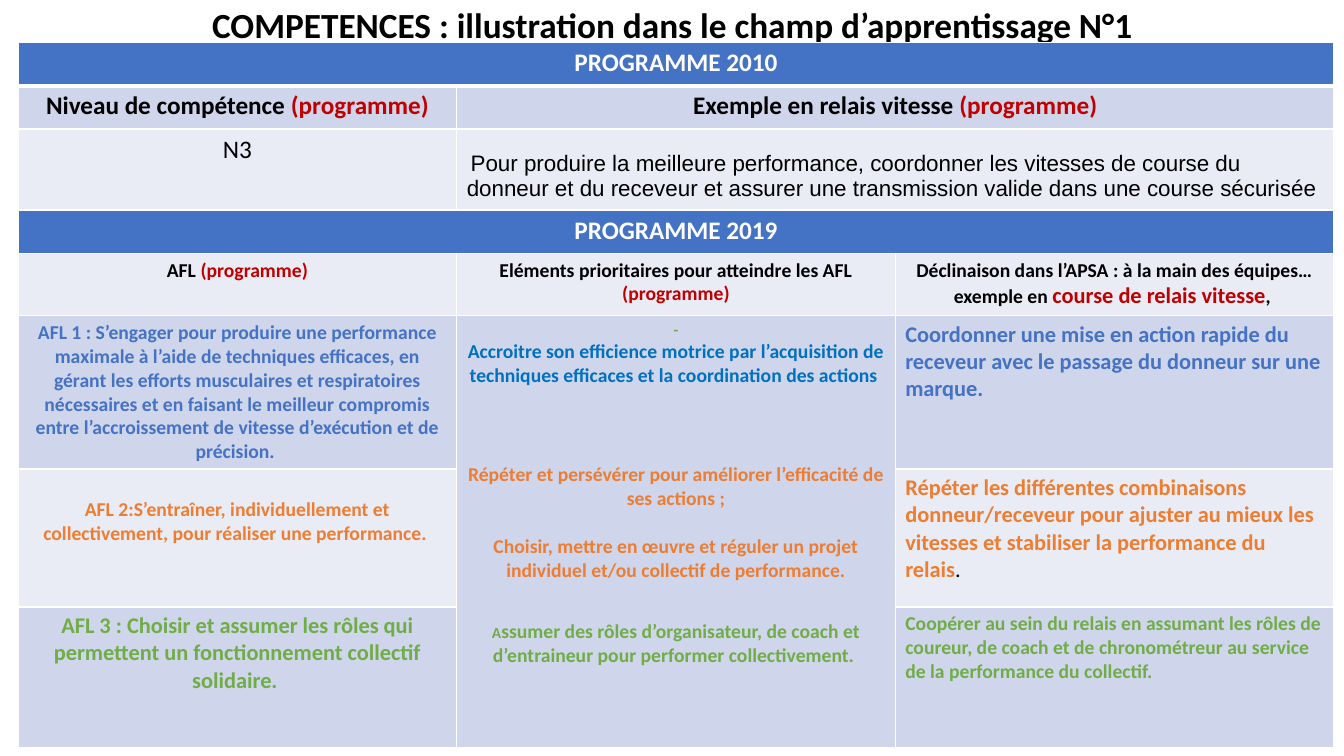
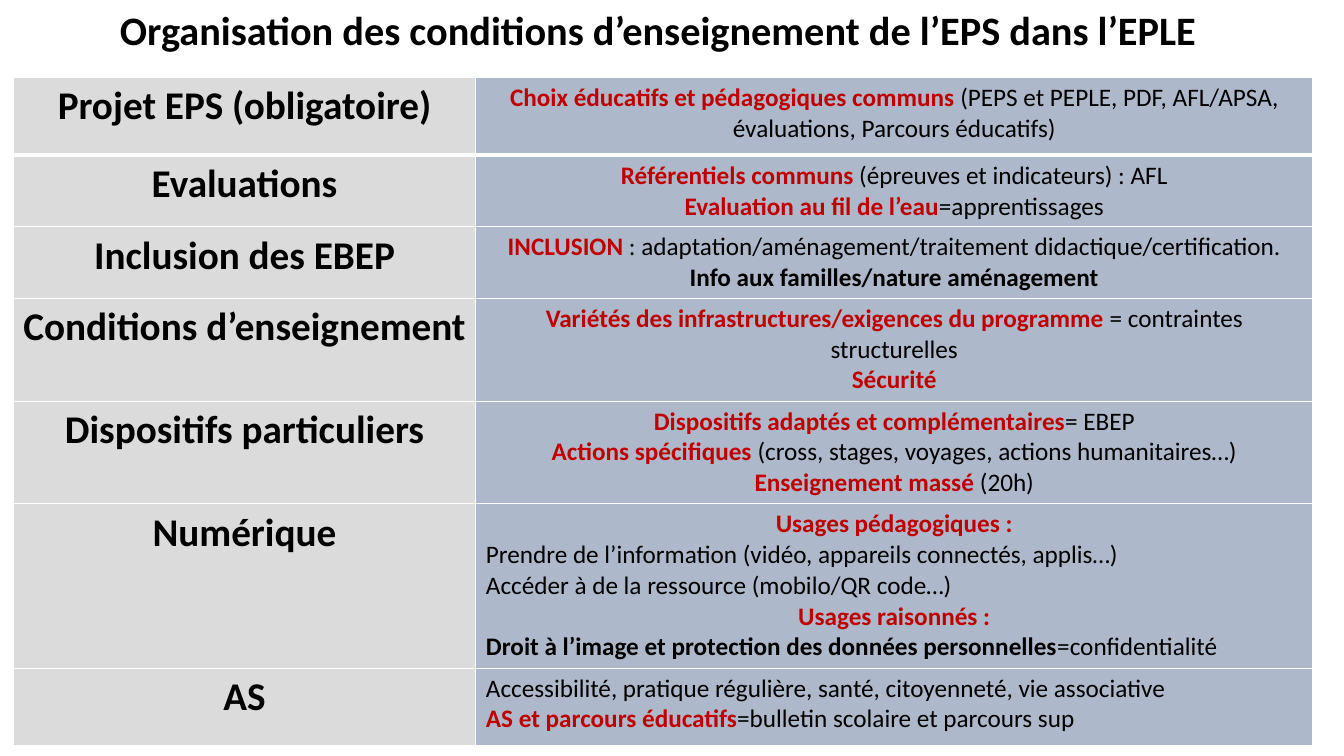
from lxml import etree
from pptx import Presentation
from pptx.dml.color import RGBColor
from pptx.enum.text import MSO_ANCHOR, PP_ALIGN
from pptx.oxml.ns import qn
from pptx.util import Inches, Pt

LEFT, MID = PP_ALIGN.LEFT, PP_ALIGN.CENTER
CENTRE = MSO_ANCHOR.MIDDLE

BLACK, WHITE, RED = "000000", "FFFFFF", "C00000"
BLUE, SKY, ORANGE, GREEN = "4472C4", "0070C0", "ED7D31", "70AD47"
DARK, PALE = "CFD5EA", "E9EBF5"
GREY, SLATE = "DBDBDB", "ADB9CA"


def rgb(code):
    return RGBColor.from_string(code)


def run(text, size=18, color=BLACK, bold=True, font="Calibri"):
    return text, size, color, bold, font


def plain(text, size=18):
    return run(text, size, bold=False)


def red(text, size=18):
    return run(text, size, RED)


def para(*runs, align=MID, gap=0):
    return align, gap, runs


class Deck:
    """Holds the shared style and the current slide."""

    def __init__(self):
        self.prs = Presentation()
        self.prs.slide_width = Inches(13.33)
        self.prs.slide_height = Inches(7.5)
        self.slide = None

    def page(self):
        self.slide = self.prs.slides.add_slide(self.prs.slide_layouts[6])

    def put(self, frame, paras):
        for i, (align, gap, runs) in enumerate(paras):
            line = frame.paragraphs[0] if i == 0 else frame.add_paragraph()
            line.alignment = align
            line.space_before = Pt(gap)
            for text, size, color, bold, name in runs:
                part = line.add_run()
                part.text = text
                font = part.font
                font.size, font.bold, font.name = Pt(size), bold, name
                font.color.rgb = rgb(color)

    def title(self, text, size, left, top, width, height):
        box = self.slide.shapes.add_textbox(
            Inches(left), Inches(top), Inches(width), Inches(height))
        frame = box.text_frame
        frame.word_wrap = True
        frame.vertical_anchor = CENTRE
        self.put(frame, [para(run(text, size))])
        frame.paragraphs[0].line_spacing = 0.9

    def border(self, cell, row):
        props = cell._tc.get_or_add_tcPr()
        thick = {"lnB": row == 0, "lnT": row == 1}
        for i, side in enumerate(("lnL", "lnR", "lnT", "lnB")):
            width = Pt(3 if thick.get(side) else 1)
            line = etree.Element(qn("a:" + side), w=str(width))
            fill = etree.SubElement(line, qn("a:solidFill"))
            etree.SubElement(fill, qn("a:srgbClr"), val=WHITE)
            props.insert(i, line)

    def table(self, left, top, cols, rows, cells, fills, merges=(), drops=None):
        """Fills hold a colour per cell; drops are extra top margins."""
        grid = self.slide.shapes.add_table(
            len(rows), len(cols), Inches(left), Inches(top),
            Inches(sum(cols)), Inches(sum(rows))).table
        grid.first_row = grid.horz_banding = False
        for col, width in zip(grid.columns, cols):
            col.width = Inches(width)
        for row, height in zip(grid.rows, rows):
            row.height = Inches(height)
        for r, line in enumerate(cells):
            for c, paras in enumerate(line):
                cell = grid.cell(r, c)
                cell.fill.solid()
                cell.fill.fore_color.rgb = rgb(fills[r][c])
                self.border(cell, r)
                cell.margin_top = Inches(0.05 + (drops or {}).get((r, c), 0))
                self.put(cell.text_frame, paras)
        for first, last in merges:
            grid.cell(*first).merge(grid.cell(*last))


def skills(deck):
    deck.page()
    deck.title("COMPETENCES : illustration dans le champ d’apprentissage N°1",
               25.2, 0.92, 0.11, 11.5, 0.31)

    def band(text):
        return [[para(run(text, 18, WHITE))], [], []]

    # Middle cell that spans the three AFL rows
    goals = [
        para(run("-", 11, GREEN)),
        para(run("Accroitre son efficience motrice par l’acquisition de "
                 "techniques efficaces et la coordination des actions ", 14, SKY)),
        para(run("Répéter et persévérer pour améliorer l’efficacité de ses "
                 "actions ;", 14, ORANGE), gap=54),
        para(run("Choisir, mettre en œuvre et réguler un projet individuel "
                 "et/ou collectif de performance.", 14, ORANGE), gap=17),
        para(run("A", 11, GREEN),
             run("ssumer des rôles d’organisateur, de coach et d’entraineur "
                 "pour performer collectivement. ", 14, GREEN), gap=27),
    ]
    cells = [
        band("PROGRAMME 2010"),
        [[para(run("Niveau de compétence "), red("(programme)"))],
         [para(run("Exemple en relais vitesse "), red("(programme)"))], []],
        [[para(plain("N3"))],
         [para(run(" ", 10, bold=False, font="Arial"),
               run("Pour produire la meilleure performance, coordonner les "
                   "vitesses de course du donneur et du receveur et assurer "
                   "une transmission valide dans une course sécurisée",
                   16, bold=False, font="Arial"), align=LEFT)], []],
        band("PROGRAMME 2019"),
        [[para(run("AFL ", 14), red("(programme)", 14))],
         [para(run("Eléments prioritaires pour atteindre les AFL ", 14),
               red("(programme)", 14))],
         [para(run("Déclinaison dans l’APSA : à la main des équipes…"
                   "exemple en ", 14),
               red("course de relais vitesse", 16), run(", ", 14))]],
        [[para(run("AFL 1 : S’engager pour produire une performance maximale "
                   "à l’aide de techniques efficaces, en gérant les efforts "
                   "musculaires et respiratoires nécessaires et en faisant le "
                   "meilleur compromis entre l’accroissement de vitesse "
                   "d’exécution et de précision. ", 14, BLUE))],
         goals,
         [para(run("Coordonner une mise en action rapide du receveur avec le "
                   "passage du donneur sur une marque.", 16, BLUE), align=LEFT)]],
        [[para(run("AFL 2:S’entraîner, individuellement et collectivement, "
                   "pour réaliser une performance. ", 14, ORANGE))],
         [],
         [para(run("Répéter les différentes combinaisons donneur/receveur pour "
                   "ajuster au mieux les vitesses et stabiliser la performance "
                   "du relais", 16, ORANGE), plain(".", 16), align=LEFT)]],
        [[para(run("AFL 3 : Choisir et assumer les rôles qui permettent un "
                   "fonctionnement collectif solidaire. ", 16, GREEN))],
         [],
         [para(run("Coopérer au sein du relais en assumant les rôles de "
                   "coureur, de coach et de chronométreur au service de la "
                   "performance du collectif.", 14, GREEN), align=LEFT)]],
    ]
    tones = [BLUE, DARK, PALE, BLUE, PALE, DARK, PALE, DARK]
    deck.table(
        0.18, 0.42, [4.35] * 3,
        [0.43, 0.43, 0.79, 0.43, 0.62, 1.52, 1.37, 1.39],
        cells, [[tone] * 3 for tone in tones],
        merges=[((0, 0), (0, 2)), ((1, 1), (1, 2)), ((2, 1), (2, 2)),
                ((3, 0), (3, 2)), ((5, 1), (7, 1))],
        drops={(2, 1): 0.17, (6, 0): 0.24})


def setup(deck):
    deck.page()
    deck.title("Organisation des conditions d’enseignement de l’EPS dans l’EPLE",
               28.8, 0.16, 0.08, 12.74, 0.48)
    topics = [
        ("Projet EPS (obligatoire)", 0.77, [
            para(red("Choix éducatifs et pédagogiques communs "),
                 plain("(PEPS et PEPLE, PDF, AFL/APSA, évaluations, "
                       "Parcours éducatifs)"))]),
        ("Evaluations", 0.71, [
            para(red("Référentiels communs "),
                 plain("(épreuves et indicateurs) : AFL")),
            para(red("Evaluation au fil de l’eau"), plain("=apprentissages"))]),
        ("Inclusion des EBEP", 0.71, [
            para(red("INCLUSION"),
                 plain(" : adaptation/aménagement/traitement "
                       "didactique/certification.")),
            para(run("Info aux familles/nature aménagement"))]),
        ("Conditions d’enseignement", 1.02, [
            para(red("Variétés des infrastructures/exigences du programme "),
                 plain("= contraintes structurelles")),
            para(red("Sécurité"))]),
        ("Dispositifs particuliers", 1.02, [
            para(red("Dispositifs adaptés et complémentaires"),
                 plain("= EBEP")),
            para(red("Actions spécifiques "),
                 plain("(cross, stages, voyages, actions humanitaires…)")),
            para(red("Enseignement massé "), plain("(20h)"))]),
        ("Numérique", 1.63, [
            para(red("Usages pédagogiques :")),
            para(plain("Prendre de l’information (vidéo, appareils connectés, "
                       "applis…)"), align=LEFT),
            para(plain("Accéder à de la ressource (mobilo/QR code…)"),
                 align=LEFT),
            para(red("Usages raisonnés :")),
            para(run("Droit à l’image et protection des données personnelles"),
                 plain("=confidentialité"), align=LEFT)]),
        ("AS", 0.77, [
            para(plain("Accessibilité, pratique régulière, santé, citoyenneté, "
                       "vie associative"), align=LEFT),
            para(red("AS et parcours éducatifs"),
                 plain("=bulletin scolaire et parcours sup"), align=LEFT)]),
    ]
    deck.table(0.13, 0.77, [4.59, 8.3], [high for _, high, _ in topics],
               [[[para(run(name, 28))], body] for name, _, body in topics],
               [[GREY, SLATE]] * len(topics))


def main():
    deck = Deck()
    skills(deck)
    setup(deck)
    deck.prs.save("out.pptx")


if __name__ == "__main__":
    main()
